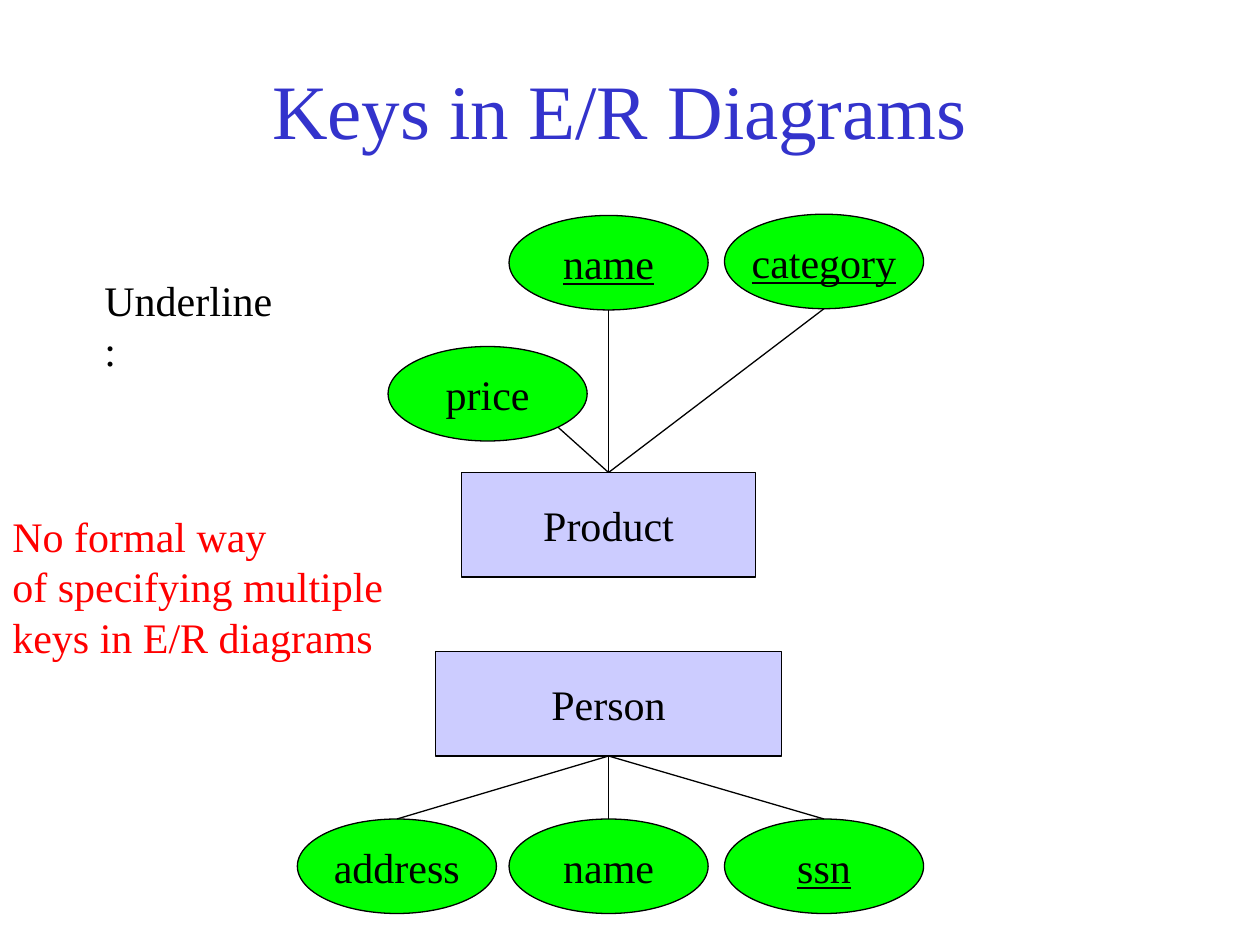
"""Build a slide on marking keys with underlines in E/R diagrams."""
import math

import lxml.etree
import pptx
import pptx.dml.color
import pptx.enum.shapes
import pptx.enum.text
import pptx.oxml.ns
import pptx.util

Inches = pptx.util.Inches
SHAPES = pptx.enum.shapes.MSO_SHAPE
ALIGN = pptx.enum.text.PP_ALIGN
ANCHOR = pptx.enum.text.MSO_ANCHOR

COLORS = {"title": "3333CC", "ink": "000000", "note": "FF0000",
          "attribute": "00FF00", "entity": "CCCCFF"}
FONT = "Times New Roman"
AXIS = 4.83
ATTRIBUTE_WIDTH, ATTRIBUTE_HEIGHT = 1.58, 0.75
ENTITY_HEIGHT = 0.83
DIAGONAL = math.sqrt(0.5)
ANCHORS = {"top": (0, -1), "bottom": (0, 1), "lower right": (DIAGONAL, DIAGONAL)}

TITLE = ["Keys in E/R Diagrams"]
LABEL = ["Underline:"]
NOTE = ["No formal way", "of specifying multiple", "keys in E/R diagrams"]
ENTITIES = [
    {"name": "Product", "top": 3.75, "width": 2.33, "joint": 3.75, "attributes": [
        ("price", 3.08, 2.75, False, "lower right"),
        ("name", 4.04, 1.71, True, "bottom"),
        ("category", 5.75, 1.7, True, "bottom")]},
    {"name": "Person", "top": 5.17, "width": 2.75, "joint": 6, "attributes": [
        ("address", 2.36, 6.5, False, "top"),
        ("name", 4.04, 6.5, False, "top"),
        ("ssn", 5.75, 6.5, True, "top")]},
]


def rgb(role):
    return pptx.dml.color.RGBColor.from_string(COLORS[role])


def write(frame, lines, size=24, role="ink", align=ALIGN.LEFT, underline=None):
    frame.text = "\n".join(lines)
    for paragraph in frame.paragraphs:
        paragraph.alignment = align
        for run in paragraph.runs:
            run.font.name = FONT
            run.font.size = pptx.util.Pt(size)
            run.font.color.rgb = rgb(role)
            run.font.underline = underline


def add_text(slide, box, lines, wrap=False, anchor=ANCHOR.TOP, **style):
    frame = slide.shapes.add_textbox(*map(Inches, box)).text_frame
    frame.word_wrap = wrap
    frame.vertical_anchor = anchor
    write(frame, lines, **style)


def add_node(slide, kind, box, name, role, key=False):
    node = slide.shapes.add_shape(kind, *map(Inches, box))
    node.shadow.inherit = False
    node.fill.solid()
    node.fill.fore_color.rgb = rgb(role)
    node.line.color.rgb = rgb("ink")
    node.line.width = pptx.util.Pt(0.75)
    node.text_frame.word_wrap = False
    node.text_frame.vertical_anchor = ANCHOR.MIDDLE
    write(node.text_frame, [name], align=ALIGN.CENTER, underline=key or None)


def add_link(slide, start, end):
    link = slide.shapes.add_connector(
        pptx.enum.shapes.MSO_CONNECTOR.STRAIGHT, *map(Inches, start + end))
    link.line.color.rgb = rgb("ink")
    link.line.width = pptx.util.Pt(0.75)
    lxml.etree.SubElement(link._element.spPr, pptx.oxml.ns.qn("a:effectLst"))


def add_entity(slide, entity):
    for name, left, top, key, anchor in entity["attributes"]:
        add_node(slide, SHAPES.OVAL, (left, top, ATTRIBUTE_WIDTH, ATTRIBUTE_HEIGHT),
                 name, "attribute", key)
        across, down = ANCHORS[anchor]
        end = (left + ATTRIBUTE_WIDTH / 2 * (1 + across),
               top + ATTRIBUTE_HEIGHT / 2 * (1 + down))
        add_link(slide, (AXIS, entity["joint"]), end)
    width = entity["width"]
    add_node(slide, SHAPES.RECTANGLE,
             (AXIS - width / 2, entity["top"], width, ENTITY_HEIGHT),
             entity["name"], "entity")


def main():
    deck = pptx.Presentation()
    deck.slide_width, deck.slide_height = Inches(10), Inches(7.5)
    slide = deck.slides.add_slide(deck.slide_layouts[6])
    add_text(slide, (0.67, 0.24, 8.5, 1.25), TITLE, wrap=True, anchor=ANCHOR.MIDDLE,
             size=44, role="title", align=ALIGN.CENTER)
    add_text(slide, (0, 4, 3.17, 1.31), NOTE, role="note")
    add_text(slide, (0.73, 2.13, 1.62, 0.5), LABEL)
    for entity in ENTITIES:
        add_entity(slide, entity)
    deck.save("out.pptx")


if __name__ == "__main__":
    main()
